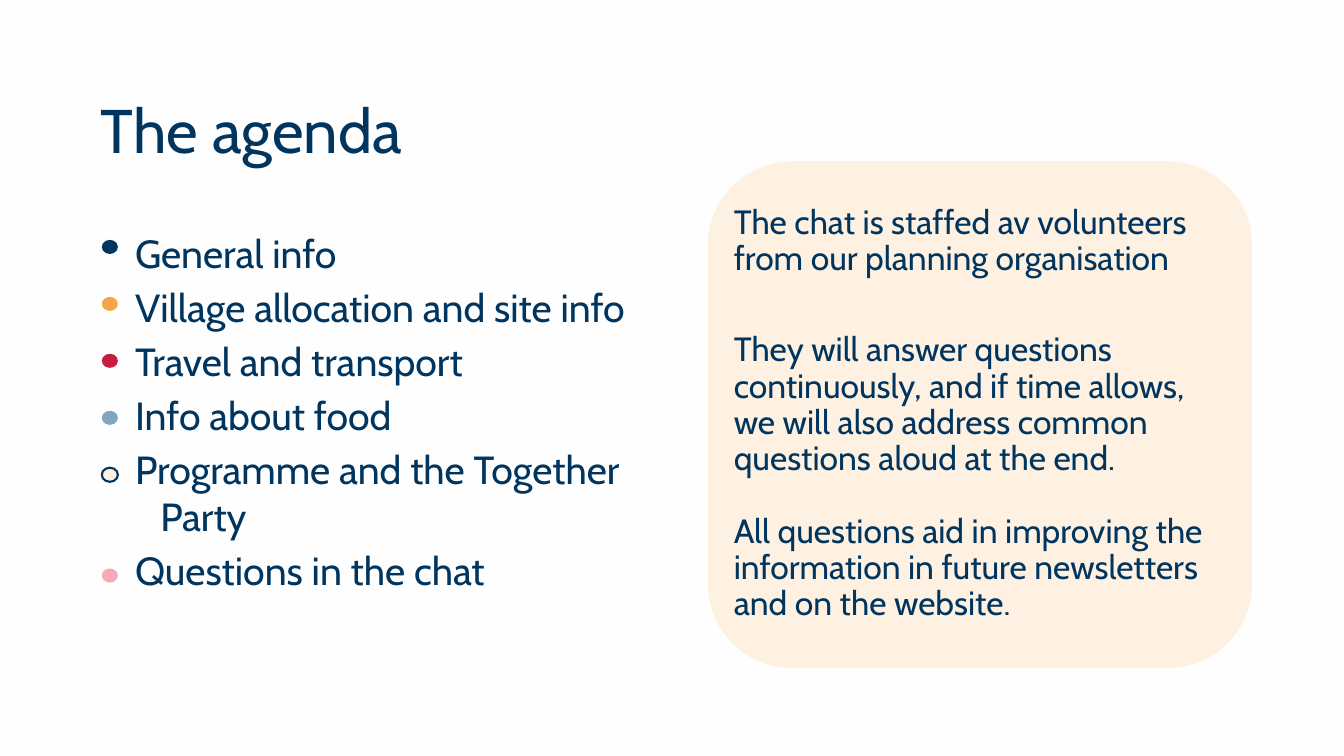
from pptx import Presentation
from pptx.dml.color import RGBColor
from pptx.enum.shapes import MSO_SHAPE
from pptx.enum.text import MSO_ANCHOR, MSO_AUTO_SIZE, PP_ALIGN
from pptx.oxml.ns import qn
from pptx.util import Inches, Pt
from lxml.etree import SubElement

FONT = "Cabin"
NAVY, CREAM, PAPER = "00355F", "FEF1E2", "FEFEFE"
DOT_PITCH, WRAPPED_LINE = 0.565, 0.435

# Text, dot fill, dot outline, lines taken
AGENDA = [
    ("General info", NAVY, None, 1),
    ("Village allocation and site info", "F8A54A", None, 1),
    ("Travel and transport", "C61E3F", None, 1),
    ("Info about food", "80A5BF", None, 1),
    ("Programme and the Together Party", CREAM, NAVY, 2),
    ("Questions in the chat", "F7AAB5", None, 1),
]
# Text, space before in points
CHAT_NOTES = [
    ("The chat is staffed av volunteers from our planning organisation", 0),
    ("They will answer questions continuously, and if time allows, "
     "we will also address common questions aloud at the end.", 39),
    ("All questions aid in improving the information in future newsletters "
     "and on the website.", 26),
]


def rgb(color):
    return RGBColor.from_string(color)


def place(sp, x, y, w, h):
    sp.left, sp.top, sp.width, sp.height = map(Inches, (x, y, w, h))


def add_run(p, text, size):
    r = p.add_run()
    r.text = text
    r.font.name, r.font.size = FONT, Pt(size)
    r.font.color.rgb = rgb(NAVY)


def set_frame(tf, anchor):
    tf.word_wrap = True
    tf.auto_size = MSO_AUTO_SIZE.NONE
    tf.vertical_anchor = anchor


def add_paragraph(tf, index, space_before, line_spacing):
    p = tf.add_paragraph() if index else tf.paragraphs[0]
    p.alignment = PP_ALIGN.LEFT
    p.line_spacing = line_spacing
    p.space_before = Pt(space_before if index else 0)
    return p


def set_hanging(p, margin, indent):
    """Indent the paragraph and switch its bullet off."""
    pPr = p._p.get_or_add_pPr()
    pPr.set("marL", str(Inches(margin)))
    pPr.set("indent", str(Inches(indent)))
    SubElement(pPr, qn("a:buNone"))


def add_filled(s, kind, x, y, w, h, fill, outline=None):
    sp = s.shapes.add_shape(kind, *map(Inches, (x, y, w, h)))
    sp.shadow.inherit = False
    sp.fill.solid()
    sp.fill.fore_color.rgb = rgb(fill)
    if outline:
        sp.line.color.rgb = rgb(outline)
        sp.line.width = Pt(1.5)
    else:
        sp.line.fill.background()


def fill_title(s, x, y, w, h):
    title = s.shapes.title
    place(title, x, y, w, h)
    set_frame(title.text_frame, MSO_ANCHOR.MIDDLE)
    add_run(add_paragraph(title.text_frame, 0, 0, 0.9), "The agenda", 44)


def fill_agenda(s, x, y, w, h):
    body = s.placeholders[1]
    place(body, x, y, w, h)
    tf = body.text_frame
    set_frame(tf, MSO_ANCHOR.TOP)
    dot_y = y + 0.16
    for i, (text, fill, outline, lines) in enumerate(AGENDA):
        p = add_paragraph(tf, i, 5, 1.0)
        p.level = 1
        set_hanging(p, 0.75, -0.25)
        add_run(p, text, 28)
        add_filled(s, MSO_SHAPE.OVAL, x + 0.27, dot_y, 0.16, 0.14, fill, outline)
        dot_y += DOT_PITCH + WRAPPED_LINE * (lines - 1)


def add_chat_card(s, x, y, w, h):
    add_filled(s, MSO_SHAPE.ROUNDED_RECTANGLE, x, y, w, h, CREAM)
    box = s.shapes.add_textbox(Inches(x + 0.16), Inches(y + 0.39),
                               Inches(w - 0.33), Inches(h - 0.86))
    tf = box.text_frame
    set_frame(tf, MSO_ANCHOR.TOP)
    for i, (text, space) in enumerate(CHAT_NOTES):
        add_run(add_paragraph(tf, i, space, 0.9), text, 24)


def main():
    prs = Presentation()
    prs.slide_width, prs.slide_height = Inches(13.33), Inches(7.5)
    s = prs.slides.add_slide(prs.slide_layouts[1])
    s.background.fill.solid()
    s.background.fill.fore_color.rgb = rgb(PAPER)
    fill_title(s, 0.9, 0.78, 5.67, 1.09)
    fill_agenda(s, 0.74, 2.22, 6.12, 4.01)
    add_chat_card(s, 7.02, 1.6, 5.4, 5.03)
    prs.save("out.pptx")


if __name__ == "__main__":
    main()
